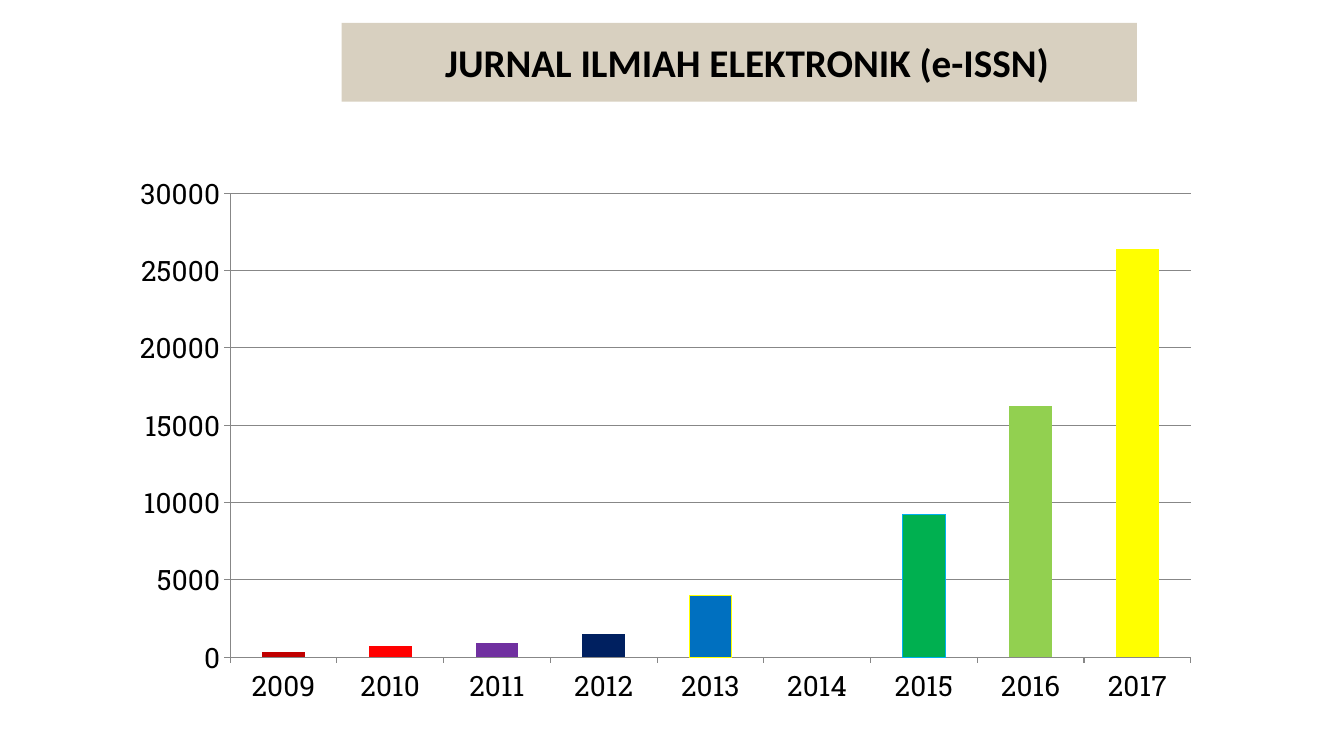
from dataclasses import dataclass

import pptx
import pptx.chart.data
import pptx.dml.color
import pptx.enum.chart
import pptx.enum.shapes
import pptx.enum.text
import pptx.oxml
import pptx.util

Cm, Pt = pptx.util.Cm, pptx.util.Pt


@dataclass(frozen=True)
class Theme:
    ink: str = "000000"
    band: str = "D8D0C0"
    grid: str = "878787"
    base: str = "D34817"
    head_font: str = "Calibri"
    chart_font: str = "Roboto Slab"
    head_size: int = 28
    chart_size: int = 20


@dataclass(frozen=True)
class Box:
    left: float
    top: float
    width: float
    height: float

    def place(self) -> tuple:
        return Cm(self.left), Cm(self.top), Cm(self.width), Cm(self.height)


@dataclass(frozen=True)
class Bar:
    year: int
    count: int | None
    fill: str | None = None
    edge: str | None = None


THEME = Theme()
BARS = [
    Bar(2009, 300, "C00000"),
    Bar(2010, 700, "FF0000"),
    Bar(2011, 900, "7030A0"),
    Bar(2012, 1500, "002060"),
    Bar(2013, 4000, "0070C0", "FFFF00"),
    Bar(2014, None),
    Bar(2015, 9200, "00B050", "00B0F0"),
    Bar(2016, 16200, "92D050"),
    Bar(2017, 26400, "FFFF00"),
]


def paint(fill, code: str) -> None:
    fill.solid()
    fill.fore_color.rgb = pptx.dml.color.RGBColor.from_string(code)


def style(font, name: str, size: int, bold: bool) -> None:
    font.name, font.size, font.bold = name, Pt(size), bold
    paint(font.fill, THEME.ink)


def add_title(slide, box: Box, text: str) -> None:
    shape = slide.shapes.add_shape(pptx.enum.shapes.MSO_SHAPE.RECTANGLE, *box.place())
    shape.shadow.inherit = False
    paint(shape.fill, THEME.band)
    shape.line.fill.background()
    frame = shape.text_frame
    frame.word_wrap = True
    frame.margin_left = Cm(0.64)
    frame.vertical_anchor = pptx.enum.text.MSO_ANCHOR.MIDDLE
    para = frame.paragraphs[0]
    para.text = text
    para.alignment = pptx.enum.text.PP_ALIGN.CENTER
    style(para.font, THEME.head_font, THEME.head_size, True)


def set_plot(chart, x: float, y: float, w: float, h: float) -> None:
    """Fix the inner plot area, in fractions of the chart."""
    area = chart._chartSpace.chart.plotArea
    for old in area.findall(pptx.oxml.ns.qn("c:layout")):
        area.remove(old)
    area.insert(0, pptx.oxml.parse_xml(
        f'<c:layout {pptx.oxml.ns.nsdecls("c")}><c:manualLayout>'
        '<c:layoutTarget val="inner"/><c:xMode val="edge"/><c:yMode val="edge"/>'
        f'<c:x val="{x}"/><c:y val="{y}"/><c:w val="{w}"/><c:h val="{h}"/>'
        '</c:manualLayout></c:layout>'))


def add_bars(slide, box: Box, bars: list[Bar]) -> None:
    data = pptx.chart.data.CategoryChartData()
    data.categories = [str(bar.year) for bar in bars]
    data.add_series("Series 1", [bar.count for bar in bars])
    kind = pptx.enum.chart.XL_CHART_TYPE.COLUMN_CLUSTERED
    chart = slide.shapes.add_chart(kind, *box.place(), data).chart
    chart.has_legend = chart.has_title = False
    style(chart.font, THEME.chart_font, THEME.chart_size, False)
    set_plot(chart, 0.1, 0.05, 0.88, 0.84)

    for axis in (chart.category_axis, chart.value_axis):
        axis.major_tick_mark = pptx.enum.chart.XL_TICK_MARK.OUTSIDE
        axis.minor_tick_mark = pptx.enum.chart.XL_TICK_MARK.NONE
        paint(axis.format.line.fill, THEME.grid)
    scale = chart.value_axis
    scale.minimum_scale, scale.maximum_scale, scale.major_unit = 0, 30000, 5000
    scale.has_major_gridlines = True
    paint(scale.major_gridlines.format.line.fill, THEME.grid)

    plot = chart.plots[0]
    plot.gap_width = 150
    plot.vary_by_categories = False
    series = plot.series[0]
    paint(series.format.fill, THEME.base)
    for index, bar in enumerate(bars):
        if bar.fill:
            form = series.points[index].format
            paint(form.fill, bar.fill)
            if bar.edge:
                paint(form.line.fill, bar.edge)


def main() -> None:
    deck = pptx.Presentation()
    deck.slide_width, deck.slide_height = Cm(33.87), Cm(19.05)
    slide = deck.slides.add_slide(deck.slide_layouts[6])
    add_title(slide, Box(8.61, 0.58, 20.04, 1.98), "JURNAL ILMIAH ELEKTRONIK (e-ISSN)")
    add_bars(slide, Box(3.05, 4.17, 27.51, 13.92), BARS)
    deck.save("out.pptx")


if __name__ == "__main__":
    main()
